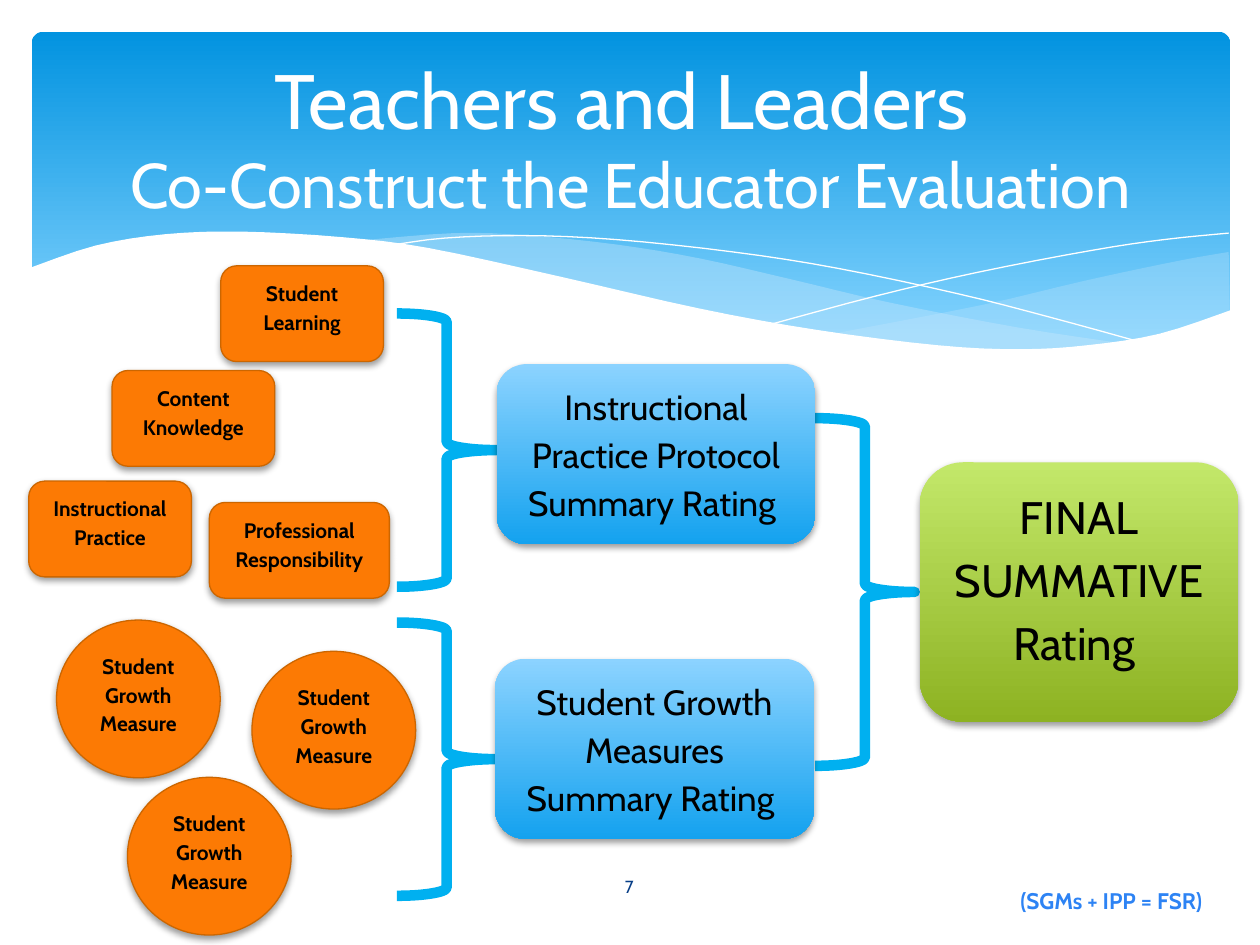
from lxml import etree
from pptx import Presentation
from pptx import util as u
from pptx.dml.color import RGBColor
from pptx.enum import shapes, text
from pptx.oxml import parse_xml
from pptx.oxml.ns import qn, nsdecls

HUES = {
    "sky": "0293E0", "pale": "83D3FE", "mist": "C6E7FC", "white": "FFFFFF",
    "orange": "FC7A04", "rust": "CC6600", "cyan": "00B0F0", "ice": "8CD3FF",
    "blue": "14A2EF", "lime": "C3E86A", "olive": "8DB222", "black": "000000",
    "navy": "073E87", "azure": "2D83F4",
}
HUES = {name: RGBColor.from_string(code) for name, code in HUES.items()}
KIND = shapes.MSO_SHAPE
MID = text.PP_ALIGN.CENTER

deck = Presentation()
deck.slide_width, deck.slide_height = u.Cm(25.4), u.Cm(19.05)
slide = deck.slides.add_slide(deck.slide_layouts[6])


def wave(edges, closed):
    track = []
    for edge in edges:
        ends = [edge[0], *edge, edge[-1]]
        for a, b, c, d in zip(ends, ends[1:], ends[2:], ends[3:]):
            for t in (0, 0.25, 0.5, 0.75):
                track.append(tuple(
                    u.Cm(q + t * (r - p + t * (2 * p - 5 * q + 4 * r - s
                         + t * (3 * q - p - 3 * r + s))) / 2)
                    for p, q, r, s in zip(a, b, c, d)))
        track.append(tuple(u.Cm(v) for v in edge[-1]))
    pen = slide.shapes.build_freeform(*track[0], scale=1.0)
    pen.add_line_segments(track[1:], close=closed)
    form = pen.convert_to_shape()
    form.shadow.inherit = False
    return form


def write(shape, words, size, hue, bold=False, align=MID):
    frame = shape.text_frame
    frame.word_wrap = True
    para = frame.paragraphs[0]
    para.text = words
    para.alignment = align
    for run in para.runs:
        run.font.name = "Cabin"
        run.font.size = u.Pt(size)
        run.font.bold = bold
        run.font.color.rgb = HUES[hue]
    return frame


sheet = slide.shapes.add_shape(KIND.ROUNDED_RECTANGLE, u.Cm(0.64), u.Cm(0.64), u.Cm(24.16), u.Cm(6.86))
sheet.adjustments[0] = 0.034
sheet.shadow.inherit = False
sheet.line.fill.background()
sheet.fill.gradient()
sheet.fill.gradient_angle = 270
for stop, spot, hue in zip(sheet.fill.gradient_stops, (0, 0.9), ("sky", "pale")):
    stop.position = spot
    stop.color.rgb = HUES[hue]

right = [
    [(24.77, 5.08), (23.75, 5.26), (21.87, 5.66), (19.79, 6.15), (16.79, 6.73)],
    [(16.79, 6.73), (18.59, 6.96), (20.4, 7.06), (22.15, 6.96), (23.57, 6.68), (24.79, 6.27)],
]
centre = [
    [(22.68, 6.93), (20.5, 6.6), (17.93, 6.1), (15.98, 5.64), (14.1, 5.21),
     (12.42, 4.93), (10.67, 4.75), (9.17, 4.7), (7.26, 4.85)],
    [(7.26, 4.85), (9.19, 5.16), (11.4, 5.64), (13.46, 6.1), (15.7, 6.55),
     (17.65, 6.86), (19.33, 7.04), (21.03, 7.06), (22.68, 6.93)],
]
fall = [(7.85, 4.95), (8.97, 4.8), (10.57, 4.75), (12.42, 4.83), (14.78, 5.08),
        (16.89, 5.41), (19.3, 5.92), (21.11, 6.38), (23.04, 6.91)]
rise = [(15.57, 6.53), (17.65, 5.97), (19.71, 5.49), (22, 5.05), (23.47, 4.83), (24.77, 4.7)]
front = [
    [(24.82, 6.25), (23.37, 6.73), (21.92, 6.96), (20.55, 7.04), (18.9, 6.96),
     (16.46, 6.65), (14.1, 6.22), (11.35, 5.59), (8.64, 5), (6.88, 4.78),
     (4.9, 4.67), (3.35, 4.72), (1.93, 4.95), (0.58, 5.41)],
    [(0.58, 8.36), (24.82, 8.36)],
]

for edges, hue, part in ((right, "mist", 29), (centre, "mist", 40)):
    form = wave(edges, True)
    form.line.fill.background()
    form.fill.solid()
    form.fill.fore_color.rgb = HUES[hue]
    tint = form._element.spPr.find(".//" + qn("a:srgbClr"))
    etree.SubElement(tint, qn("a:alpha")).set("val", str(part * 1000))

for edge in (fall, rise):
    form = wave([edge], False)
    form.fill.background()
    form.line.color.rgb = HUES["white"]
    form.line.width = u.Pt(0)

form = wave(front, True)
form.line.fill.background()
form.fill.solid()
form.fill.fore_color.rgb = HUES["white"]

labels = [
    (20.32, 17.75, 4.27, 1.07, "(SGMs + IPP = FSR)", 12.9, "azure", True, text.PP_ALIGN.LEFT),
    (11.07, 17.37, 3.23, 1.02, "7", 10, "navy", False, MID),
    (0.64, 0.64, 24.13, 4.24, "Teachers and Leaders \vCo-Construct the Educator Evaluation",
     44, "white", False, MID),
]
for x, y, w, h, words, size, hue, bold, align in labels:
    label = slide.shapes.add_textbox(u.Cm(x), u.Cm(y), u.Cm(w), u.Cm(h))
    frame = write(label, words, size, hue, bold, align)
    if align == MID:
        frame.vertical_anchor = text.MSO_ANCHOR.MIDDLE
frame.paragraphs[0].runs[1].font.size = u.Pt(36)

for x, y, h in ((8, 6.32, 5.51), (8, 12.55, 5.51), (16.43, 8.43, 7.01)):
    brace = slide.shapes.add_shape(KIND.RIGHT_BRACE, u.Cm(x), u.Cm(y), u.Cm(2.01), u.Cm(h))
    brace.shadow.inherit = False
    brace.fill.background()
    brace.line.color.rgb = HUES["cyan"]
    brace.line.width = u.Pt(6)

ROUND, OVAL = KIND.ROUNDED_RECTANGLE, KIND.OVAL
growth = "Student Growth Measure"
boxes = [
    (OVAL, 2.57, 15.67, 3.3, 3.18, growth, 12, ["orange"]),
    (OVAL, 1.14, 12.5, 3.3, 3.18, growth, 12, ["orange"]),
    (OVAL, 5.08, 13.13, 3.3, 3.18, growth, 12, ["orange"]),
    (ROUND, 4.45, 5.36, 3.28, 1.93, "Student Learning", 12, ["orange"]),
    (ROUND, 0.58, 9.7, 3.28, 1.93, "Instructional Practice", 12, ["orange"]),
    (ROUND, 4.22, 10.13, 3.63, 1.93, "Professional Responsibility", 12, ["orange"]),
    (ROUND, 2.26, 7.47, 3.28, 1.93, "Content Knowledge", 12, ["orange"]),
    (ROUND, 10.01, 7.34, 6.43, 3.63, "Instructional Practice Protocol Summary Rating ", 20, ["ice", "blue"]),
    (ROUND, 18.54, 9.32, 6.43, 5.23, "FINAL SUMMATIVE Rating ", 26, ["lime", "olive"]),
    (ROUND, 9.98, 13.28, 6.43, 3.63, "Student Growth Measures Summary Rating ", 20, ["ice", "blue"]),
]
for kind, x, y, w, h, words, size, tones in boxes:
    box = slide.shapes.add_shape(kind, u.Cm(x), u.Cm(y), u.Cm(w), u.Cm(h))
    plain = len(tones) == 1
    if plain:
        box.fill.solid()
        box.fill.fore_color.rgb = HUES[tones[0]]
        box.line.color.rgb = HUES["rust"]
        box.line.width = u.Pt(0.75)
    else:
        box.fill.gradient()
        box.fill.gradient_angle = 270
        for stop, spot, tone in zip(box.fill.gradient_stops, (0, 1), tones):
            stop.position = spot
            stop.color.rgb = HUES[tone]
        box.line.fill.background()
    box.shadow.inherit = False
    box._element.spPr.find(qn("a:effectLst")).append(parse_xml(
        f'<a:outerShdw {nsdecls("a")} blurRad="50800" dist="25400" dir="5400000" rotWithShape="0">'
        '<a:srgbClr val="000000"><a:alpha val="38000"/></a:srgbClr></a:outerShdw>'))
    frame = write(box, words, size, "black", plain)
    frame.vertical_anchor = text.MSO_ANCHOR.TOP
    frame.paragraphs[0].line_spacing = 1.15
    frame.paragraphs[0].space_after = u.Pt(10)

deck.save("out.pptx")
